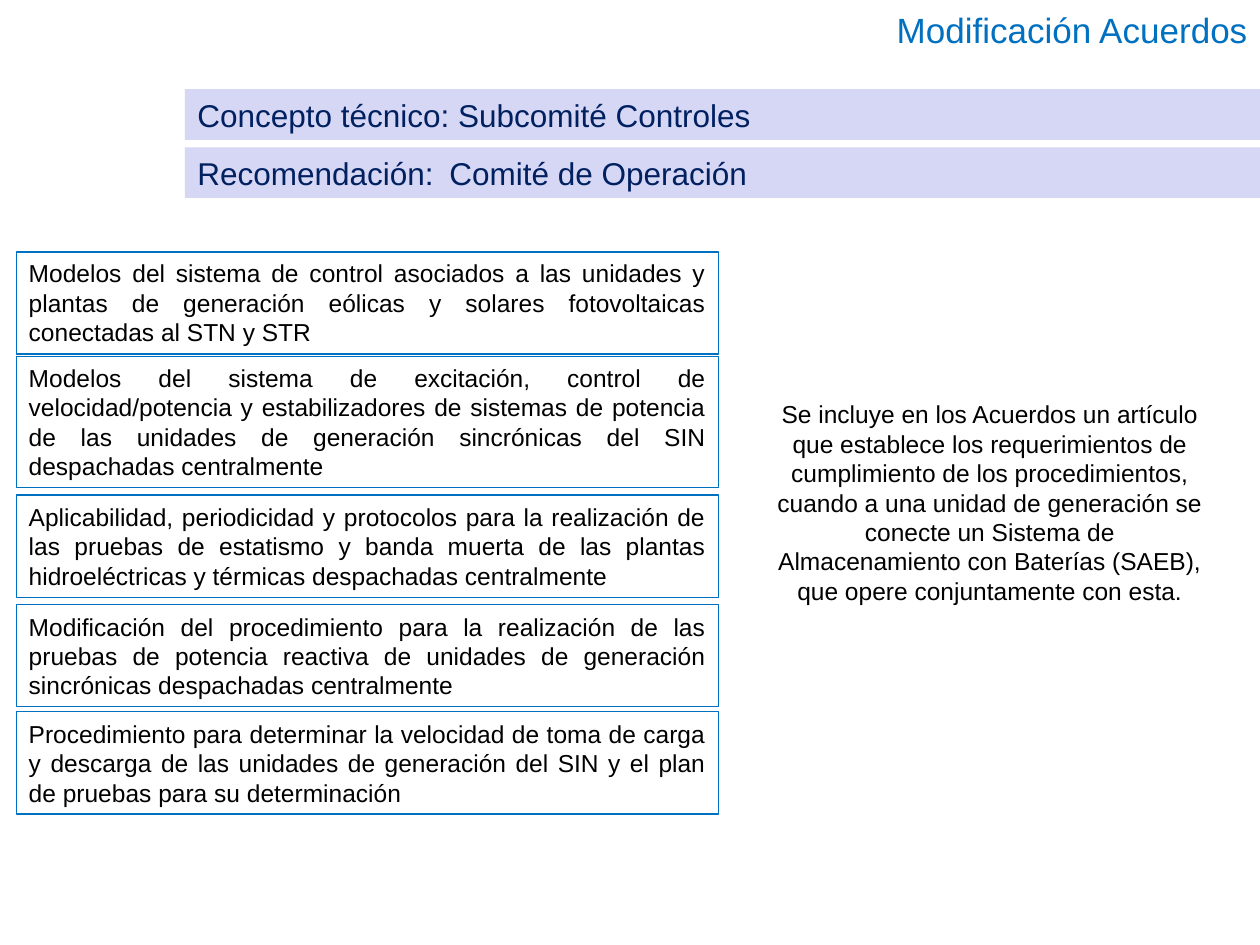
from pptx import Presentation
from pptx.dml.color import RGBColor
from pptx.enum.shapes import MSO_SHAPE
from pptx.enum.text import MSO_ANCHOR, MSO_AUTO_SIZE, PP_ALIGN
from pptx.util import Cm, Pt

BLUE = RGBColor(0x00, 0x70, 0xC0)
NAVY = RGBColor(0x00, 0x20, 0x60)
LILAC = RGBColor(0xD6, 0xD6, 0xF5)
BLACK = RGBColor(0x00, 0x00, 0x00)


def write(shape, text, size, color, align, anchor=MSO_ANCHOR.TOP,
          fit=MSO_AUTO_SIZE.SHAPE_TO_FIT_TEXT):
    frame = shape.text_frame
    look = {"word_wrap": True, "auto_size": fit, "vertical_anchor": anchor,
            "margin_left": Cm(0.25), "margin_right": Cm(0.25),
            "margin_top": Cm(0.13), "margin_bottom": Cm(0.13)}
    for name, value in look.items():
        setattr(frame, name, value)
    para = frame.paragraphs[0]
    para.alignment = align
    run = para.add_run()
    run.text = text
    for name, value in {"name": "Arial", "size": Pt(size)}.items():
        setattr(run.font, name, value)
    run.font.color.rgb = color


def add_box(shapes, left, top, width, height):
    box = shapes.add_shape(MSO_SHAPE.RECTANGLE, Cm(left), Cm(top),
                           Cm(width), Cm(height))
    box.shadow.inherit = False
    return box


deck = Presentation()
deck.slide_width, deck.slide_height = Cm(25.4), Cm(19.05)
slide = deck.slides.add_slide(deck.slide_layouts[5])

# Title
title = slide.shapes.title
place = {"left": Cm(14.48), "top": Cm(0.05), "width": Cm(10.92), "height": Cm(1.09)}
for name, value in place.items():
    setattr(title, name, value)
write(title, "Modificación Acuerdos", 20, BLUE, PP_ALIGN.RIGHT,
      fit=MSO_AUTO_SIZE.NONE)

# Heading bands
bands = ["Concepto técnico: Subcomité Controles",
         "Recomendación:\tComité de Operación"]
for i, text in enumerate(bands):
    band = add_box(slide.shapes, 3.73, 1.8 + 1.17 * i, 21.67, 1.02)
    band.fill.solid()
    band.fill.fore_color.rgb = LILAC
    band.line.fill.background()
    write(band, text, 18, NAVY, PP_ALIGN.JUSTIFY)

# Framed list of agreements: top, height, anchor, text
TOP, MID = MSO_ANCHOR.TOP, MSO_ANCHOR.MIDDLE
items = [
    (5.08, 2.06, TOP, "Modelos del sistema de control asociados a las unidades y "
     "plantas de generación eólicas y solares fotovoltaicas conectadas al STN y STR"),
    (7.19, 2.64, TOP, "Modelos del sistema de excitación, control de "
     "velocidad/potencia y estabilizadores de sistemas de potencia de las unidades "
     "de generación sincrónicas del SIN despachadas centralmente"),
    (9.98, 2.06, MID, "Aplicabilidad, periodicidad y protocolos para la realización "
     "de las pruebas de estatismo y banda muerta de las plantas hidroeléctricas y "
     "térmicas despachadas centralmente"),
    (12.19, 2.06, MID, "Modificación del procedimiento para la realización de las "
     "pruebas de potencia reactiva de unidades de generación sincrónicas "
     "despachadas centralmente"),
    (14.35, 2.06, MID, "Procedimiento para determinar la velocidad de toma de carga "
     "y descarga de las unidades de generación del SIN y el plan de pruebas para "
     "su determinación"),
]
group = slide.shapes.add_group_shape()
for top, height, anchor, text in items:
    box = add_box(group.shapes, 0.33, top, 14.15, height)
    box.fill.background()
    box.line.color.rgb = BLUE
    box.line.width = Pt(0.75)
    write(box, text, 14, BLACK, PP_ALIGN.JUSTIFY, anchor)

# Side note
note = slide.shapes.add_textbox(Cm(15.37), Cm(7.92), Cm(9.17), Cm(4.45))
write(note, "Se incluye en los Acuerdos un artículo que establece los requerimientos "
      "de cumplimiento de los procedimientos, cuando a una unidad de generación se "
      "conecte un Sistema de Almacenamiento con Baterías (SAEB), que opere "
      "conjuntamente con esta.", 14, BLACK, PP_ALIGN.CENTER)

deck.save("out.pptx")
